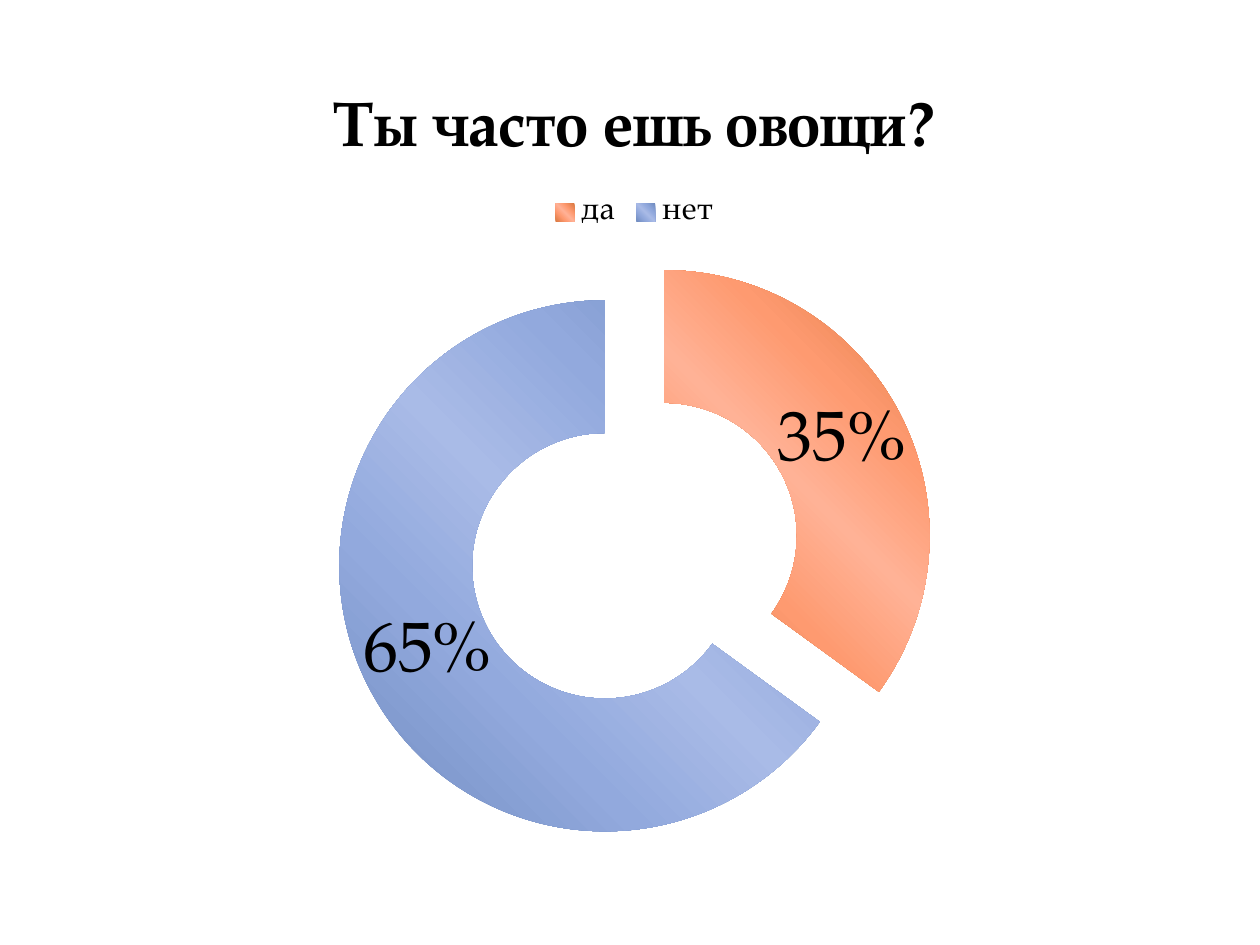
import pptx
import pptx.chart.data
import pptx.dml.color
import pptx.enum.chart
import pptx.oxml
import pptx.oxml.ns
import pptx.util

TITLE = "Ты часто ешь овощи?"
ANSWERS = [("да", 35), ("нет", 65)]
FRAME = (69, 59, 1131, 808)
SLIDE = (1260, 945)
THEME = {
    "font": "TeX Gyre Pagella",
    "text": "000000",
    "title": 36,
    "legend": 18,
    "label": 40,
    "slices": [("D9773F", "FE9A70", "FFB296"), ("6F8BBF", "92A9DD", "A9BBE7")],
    "stops": (0, 30, 50, 70, 100),
    "angle": 315,
}


def px(n):
    return pptx.util.Emu(n * 914400 // 126)


def style(font, size, bold=False):
    font.name = THEME["font"]
    font.size = pptx.util.Pt(size)
    font.bold = bold
    font.color.rgb = pptx.dml.color.RGBColor.from_string(THEME["text"])


def fill_gradient(point, dark, middle, light):
    colours = (dark, middle, light, middle, dark)
    stops = "".join(
        f'<a:gs pos="{pos * 1000}"><a:srgbClr val="{colour}"/></a:gs>'
        for pos, colour in zip(THEME["stops"], colours)
    )
    grad = pptx.oxml.parse_xml(
        f'<a:gradFill {pptx.oxml.ns.nsdecls("a")} rotWithShape="1">'
        f'<a:gsLst>{stops}</a:gsLst>'
        f'<a:lin ang="{THEME["angle"] * 60000}" scaled="0"/></a:gradFill>'
    )
    point.format.line.fill.background()
    point._element.find(
        f'.//{pptx.oxml.ns.qn("c:dPt")}[last()]/{pptx.oxml.ns.qn("c:spPr")}'
    ).insert(0, grad)


def main():
    prs = pptx.Presentation()
    prs.slide_width, prs.slide_height = map(px, SLIDE)
    s = prs.slides.add_slide(prs.slide_layouts[6])

    data = pptx.chart.data.CategoryChartData()
    data.categories = [name for name, _ in ANSWERS]
    data.add_series("Series 1", [value for _, value in ANSWERS])
    chart = s.shapes.add_chart(
        pptx.enum.chart.XL_CHART_TYPE.DOUGHNUT_EXPLODED, *map(px, FRAME), data
    ).chart
    style(chart.font, THEME["legend"])

    chart.has_title = True
    tf = chart.chart_title.text_frame
    tf.text = TITLE
    style(tf.paragraphs[0].runs[0].font, THEME["title"], bold=True)
    chart.chart_title.include_in_layout = False

    chart.has_legend = True
    chart.legend.position = pptx.enum.chart.XL_LEGEND_POSITION.TOP
    chart.legend.include_in_layout = False
    style(chart.legend.font, THEME["legend"])

    plot = chart.plots[0]
    plot.vary_by_categories = True
    series = plot.series[0]
    for i, colours in enumerate(THEME["slices"]):
        fill_gradient(series.points[i], *colours)

    labels = series.data_labels
    labels.show_percentage = True
    labels.show_value = False
    labels.number_format = "0%"
    labels.number_format_is_linked = False
    style(labels.font, THEME["label"])

    prs.save("out.pptx")


if __name__ == "__main__":
    main()
